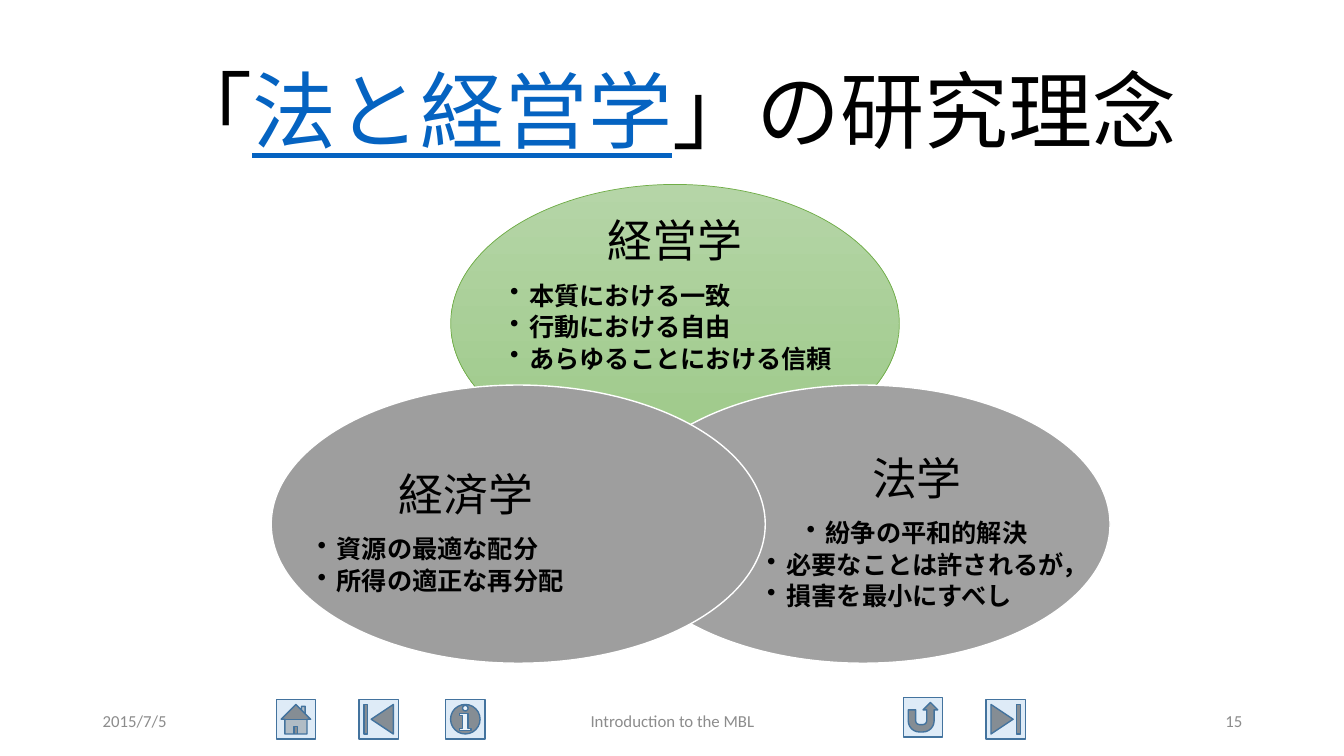
from lxml import etree
from pptx import Presentation
from pptx.dml.color import RGBColor
from pptx.enum.shapes import MSO_SHAPE as Shape
from pptx.enum.text import MSO_ANCHOR as Anchor, MSO_AUTO_SIZE as AutoSize, PP_ALIGN as Align
from pptx.oxml.ns import qn
from pptx.util import Inches, Pt

BLACK = RGBColor(0x00, 0x00, 0x00)
WHITE = RGBColor(0xFF, 0xFF, 0xFF)
LINK_BLUE = RGBColor(0x05, 0x63, 0xC1)
FOOTER_GRAY = RGBColor(0x8C, 0x8C, 0x8C)
BUTTON_FILL = RGBColor(0xDE, 0xEB, 0xF7)
BUTTON_LINE = RGBColor(0x43, 0x73, 0x9E)
GREEN_TOP = RGBColor(0xB5, 0xD5, 0xA7)
GREEN_BOTTOM = RGBColor(0x9C, 0xC9, 0x87)
GREEN_LINE = RGBColor(0x70, 0xAD, 0x47)
LAW_GRAY = RGBColor(0xA1, 0xA1, 0xA1)
ECONOMICS_GRAY = RGBColor(0x9E, 0x9E, 0x9E)

LATIN_FONT = "Calibri"
JAPANESE_FONT = "Noto Sans CJK JP"
OVAL_INSET = 0.1464  # share of an oval outside its inner text rectangle


def add_run(paragraph, text, size, color=BLACK, font=LATIN_FONT, bold=False, underline=False):
    run = paragraph.add_run()
    run.text = text
    run.font.size = Pt(size)
    run.font.color.rgb = color
    run.font.name = font
    run.font.bold = bold
    run.font.underline = underline
    east_asian = etree.SubElement(run._r.get_or_add_rPr(), qn("a:ea"))
    east_asian.set("typeface", JAPANESE_FONT)


def format_paragraph(paragraph, align=Align.LEFT, spacing=None, after=0, bullet=False):
    paragraph.alignment = align
    paragraph.space_before = Pt(0)
    paragraph.space_after = Pt(after)
    if spacing:
        paragraph.line_spacing = Pt(spacing)
    if bullet:
        paragraph.level = 1
        properties = paragraph._p.get_or_add_pPr()
        properties.set("marL", str(Inches(0.19)))
        properties.set("indent", str(-Inches(0.19)))
        etree.SubElement(properties, qn("a:buChar")).set("char", "•")


def add_title(slide, parts):
    title = slide.shapes.title
    title.left, title.top = Inches(0.92), Inches(0.4)
    title.width, title.height = Inches(11.5), Inches(1.45)
    frame = title.text_frame
    frame.word_wrap = True
    frame.auto_size = AutoSize.NONE
    frame.vertical_anchor = Anchor.MIDDLE
    paragraph = frame.paragraphs[0]
    format_paragraph(paragraph, Align.CENTER, spacing=66)
    for text, linked in parts:
        add_run(paragraph, text, 60, LINK_BLUE if linked else BLACK, underline=linked)


def add_footer(slide, text, left, width, align):
    box = slide.shapes.add_textbox(Inches(left), Inches(6.95), Inches(width), Inches(0.4))
    frame = box.text_frame
    frame.word_wrap = True
    frame.vertical_anchor = Anchor.MIDDLE
    format_paragraph(frame.paragraphs[0], align)
    add_run(frame.paragraphs[0], text, 12, FOOTER_GRAY)


def add_button(slide, kind, left, top=6.94):
    button = slide.shapes.add_shape(kind, Inches(left), Inches(top), Inches(0.39), Inches(0.39))
    button.shadow.inherit = False
    button.fill.solid()
    button.fill.fore_color.rgb = BUTTON_FILL
    button.line.color.rgb = BUTTON_LINE
    button.line.width = Pt(1)


def add_field(slide, box, insets, heading, bullets, fills, line, line_width, centered=()):
    """Draw one field of study; insets run left, top, right, bottom from the oval's box."""
    left, top, width, height = box
    oval = slide.shapes.add_shape(Shape.OVAL, *(Inches(length) for length in box))
    oval.shadow.inherit = False
    if len(fills) > 1:
        oval.fill.gradient()
        oval.fill.gradient_angle = 270
        for stop, color in zip(oval.fill.gradient_stops, fills):
            stop.color.rgb = color
    else:
        oval.fill.solid()
        oval.fill.fore_color.rgb = fills[0]
    oval.line.color.rgb = line
    oval.line.width = Pt(line_width)

    frame = oval.text_frame
    frame.word_wrap = True
    frame.vertical_anchor = Anchor.MIDDLE
    frame.margin_left = Inches(insets[0] - OVAL_INSET * width)
    frame.margin_top = Inches(insets[1] - OVAL_INSET * height)
    frame.margin_right = Inches(insets[2] - OVAL_INSET * width)
    frame.margin_bottom = Inches(insets[3] - OVAL_INSET * height)

    format_paragraph(frame.paragraphs[0], Align.CENTER, spacing=35.2, after=11.2)
    add_run(frame.paragraphs[0], heading, 32, font=JAPANESE_FONT)
    for text in bullets:
        paragraph = frame.add_paragraph()
        align = Align.CENTER if text in centered else Align.LEFT
        format_paragraph(paragraph, align, spacing=19.8, after=2.7, bullet=True)
        add_run(paragraph, text, 18, font=JAPANESE_FONT, bold=True)


def main():
    presentation = Presentation()
    presentation.slide_width, presentation.slide_height = Inches(13.33), Inches(7.5)
    slide = presentation.slides.add_slide(presentation.slide_layouts[5])

    # Navigation buttons
    add_button(slide, Shape.ACTION_BUTTON_HOME, 2.74)
    add_button(slide, Shape.ACTION_BUTTON_BEGINNING, 3.56)
    add_button(slide, Shape.ACTION_BUTTON_END, 9.78)
    add_button(slide, Shape.ACTION_BUTTON_RETURN, 8.96, top=6.92)
    add_button(slide, Shape.ACTION_BUTTON_INFORMATION, 4.42)

    # Title
    add_title(slide, [("「", False), ("法と経営学", True), ("」の研究理念", False)])

    # Overlapping fields of study
    add_field(slide, (4.47, 1.83, 4.45, 2.76), (0.59, 0.48, 0.59, 1.04), "経営学",
              ["本質における一致", "行動における自由", "あらゆることにおける信頼"],
              [GREEN_TOP, GREEN_BOTTOM], GREEN_LINE, 0.5)
    add_field(slide, (6.11, 3.82, 4.9, 2.76), (1.5, 0.71, 0.43, 0.53), "法学",
              ["紛争の平和的解決", "必要なことは許されるが，", "損害を最小にすべし"],
              [LAW_GRAY], WHITE, 1, centered=("紛争の平和的解決",))
    add_field(slide, (2.69, 3.82, 4.9, 2.76), (0.46, 0.71, 1.5, 0.53), "経済学",
              ["資源の最適な配分", "所得の適正な再分配"],
              [ECONOMICS_GRAY], WHITE, 1)

    # Footer
    add_footer(slide, "2015/7/5", 0.92, 3, Align.LEFT)
    add_footer(slide, "Introduction to the MBL", 4.42, 4.5, Align.CENTER)
    add_footer(slide, "15", 9.42, 3, Align.RIGHT)

    presentation.save("out.pptx")


if __name__ == "__main__":
    main()
